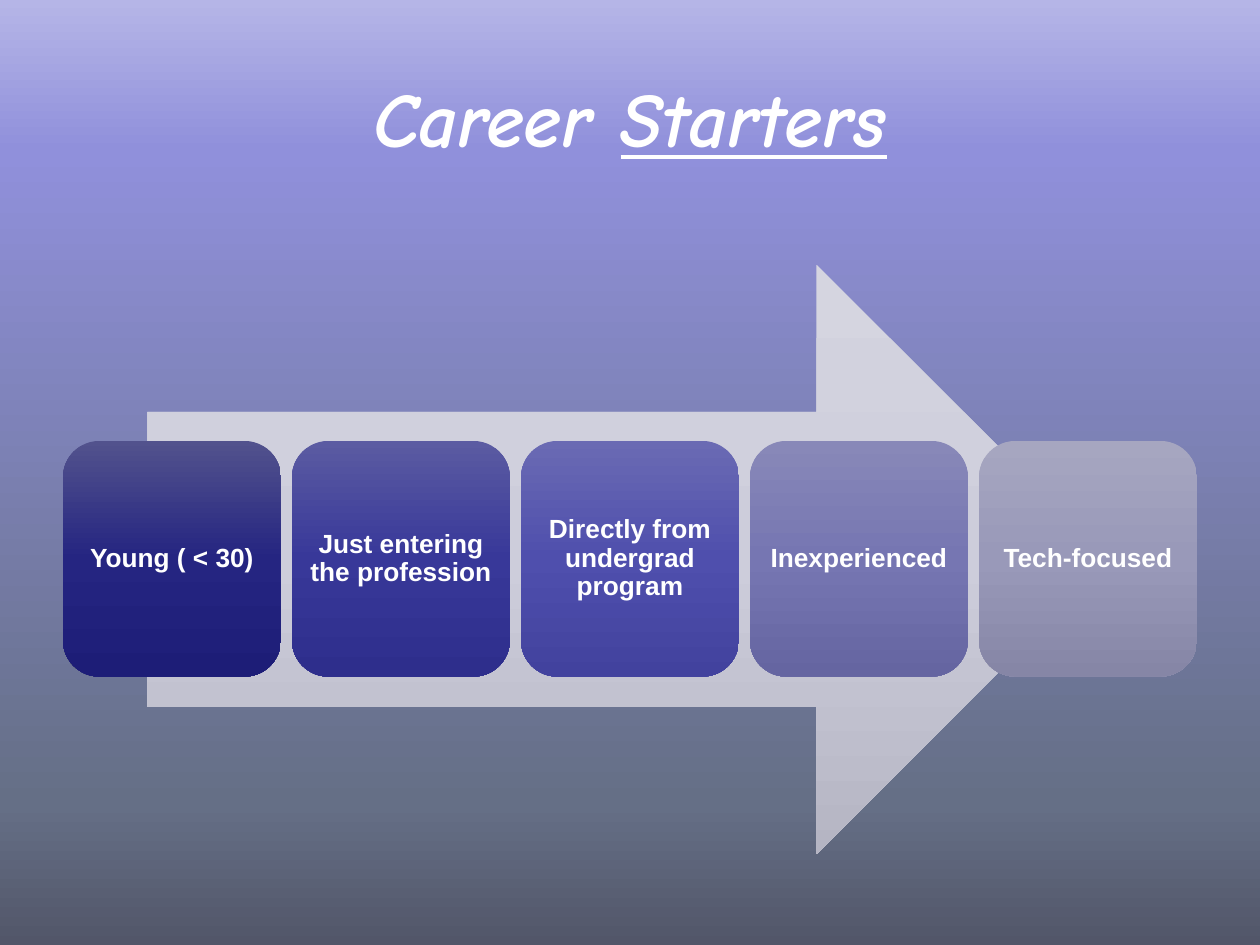
import copy
from dataclasses import dataclass

import pptx
import pptx.dml.color
import pptx.dml.fill
import pptx.enum.shapes
import pptx.enum.text
import pptx.oxml.ns
import pptx.util
from pptx.dml.color import RGBColor
from pptx.util import Inches

WHITE = RGBColor(0xFF, 0xFF, 0xFF)
SKY = (
    (0, RGBColor(0x52, 0x56, 0x69)),
    (15, RGBColor(0x65, 0x6F, 0x86)),
    (84, RGBColor(0x90, 0x90, 0xDB)),
    (100, RGBColor(0xB5, 0xB5, 0xE7)),
)
SILVER = (RGBColor(0xD5, 0xD5, 0xE0), RGBColor(0xCD, 0xCD, 0xDB), RGBColor(0xB5, 0xB5, 0xC3))
NAVY = (RGBColor(0x52, 0x52, 0x8D), RGBColor(0x25, 0x25, 0x81), RGBColor(0x1D, 0x1D, 0x77))
ROYAL = (RGBColor(0x5B, 0x5B, 0xA2), RGBColor(0x38, 0x38, 0x99), RGBColor(0x2E, 0x2E, 0x8C))
INDIGO = (RGBColor(0x6A, 0x6A, 0xB3), RGBColor(0x4F, 0x4F, 0xAD), RGBColor(0x42, 0x42, 0x9E))
LILAC = (RGBColor(0x88, 0x88, 0xB8), RGBColor(0x76, 0x76, 0xB2), RGBColor(0x65, 0x65, 0xA1))
MIST = (RGBColor(0xA6, 0xA6, 0xC0), RGBColor(0x99, 0x99, 0xB9), RGBColor(0x86, 0x86, 0xA6))

LEFT, TOP, WIDTH, HEIGHT = 0.5, 3.5, 1.73, 1.87
SPAN = 9.0
INSET = Inches(0.06)


@dataclass
class Card:
    text: str
    shades: tuple[RGBColor, ...]


CARDS = [
    Card("Young ( < 30)", NAVY),
    Card("Just entering the profession", ROYAL),
    Card("Directly from undergrad program", INDIGO),
    Card("Inexperienced", LILAC),
    Card("Tech-focused", MIST),
]


def blend(fill: pptx.dml.fill.FillFormat, root, stops, angle: int) -> None:
    fill.gradient()
    fill.gradient_angle = angle
    group = next(root.iter(pptx.oxml.ns.qn("a:gsLst")))
    while len(group) < len(stops):
        group.append(copy.deepcopy(group[0]))
    for stop, (place, shade) in zip(fill.gradient_stops, stops):
        stop.position = place / 100
        stop.color.rgb = shade


def add_block(slide, kind, box: tuple[float, ...], shades: tuple[RGBColor, ...]):
    shape = slide.shapes.add_shape(kind, *map(Inches, box))
    shape.shadow.inherit = False
    shape.line.fill.background()
    blend(shape.fill, shape.element.spPr, list(zip((0, 50, 100), shades)), 270)
    return shape


def style(para, face: str, size: int) -> None:
    para.alignment = pptx.enum.text.PP_ALIGN.CENTER
    para.font.name = face
    para.font.size = pptx.util.Pt(size)
    para.font.bold = True
    para.font.color.rgb = WHITE


def add_title(slide) -> None:
    title = slide.shapes.title
    title.left, title.top = Inches(0.5), Inches(0.3)
    title.width, title.height = Inches(9), Inches(1.25)
    frame = title.text_frame
    frame.vertical_anchor = pptx.enum.text.MSO_ANCHOR.MIDDLE
    para = frame.paragraphs[0]
    para.add_run().text = "Career "
    last = para.add_run()
    last.text = "Starters"
    last.font.underline = True
    style(para, "Comic Neue", 44)
    para.font.italic = True


def add_card(slide, card: Card, left: float) -> None:
    kind = pptx.enum.shapes.MSO_SHAPE.ROUNDED_RECTANGLE
    shape = add_block(slide, kind, (left, TOP, WIDTH, HEIGHT), card.shades)
    frame = shape.text_frame
    frame.word_wrap = True
    frame.vertical_anchor = pptx.enum.text.MSO_ANCHOR.MIDDLE
    frame.margin_left = frame.margin_right = INSET
    frame.margin_top = frame.margin_bottom = INSET
    para = frame.paragraphs[0]
    para.text = card.text
    para.line_spacing = 0.9
    style(para, "Arial", 15)


def main() -> None:
    deck = pptx.Presentation()
    deck.slide_width, deck.slide_height = Inches(10), Inches(7.5)
    slide = deck.slides.add_slide(deck.slide_layouts[5])
    blend(slide.background.fill, slide.element, SKY, 90)
    add_title(slide)
    arrow = pptx.enum.shapes.MSO_SHAPE.RIGHT_ARROW
    add_block(slide, arrow, (1.17, 2.1, 7.65, 4.68), SILVER)
    pitch = (SPAN - WIDTH) / (len(CARDS) - 1)
    for index, card in enumerate(CARDS):
        add_card(slide, card, LEFT + index * pitch)
    deck.save("out.pptx")


if __name__ == "__main__":
    main()
